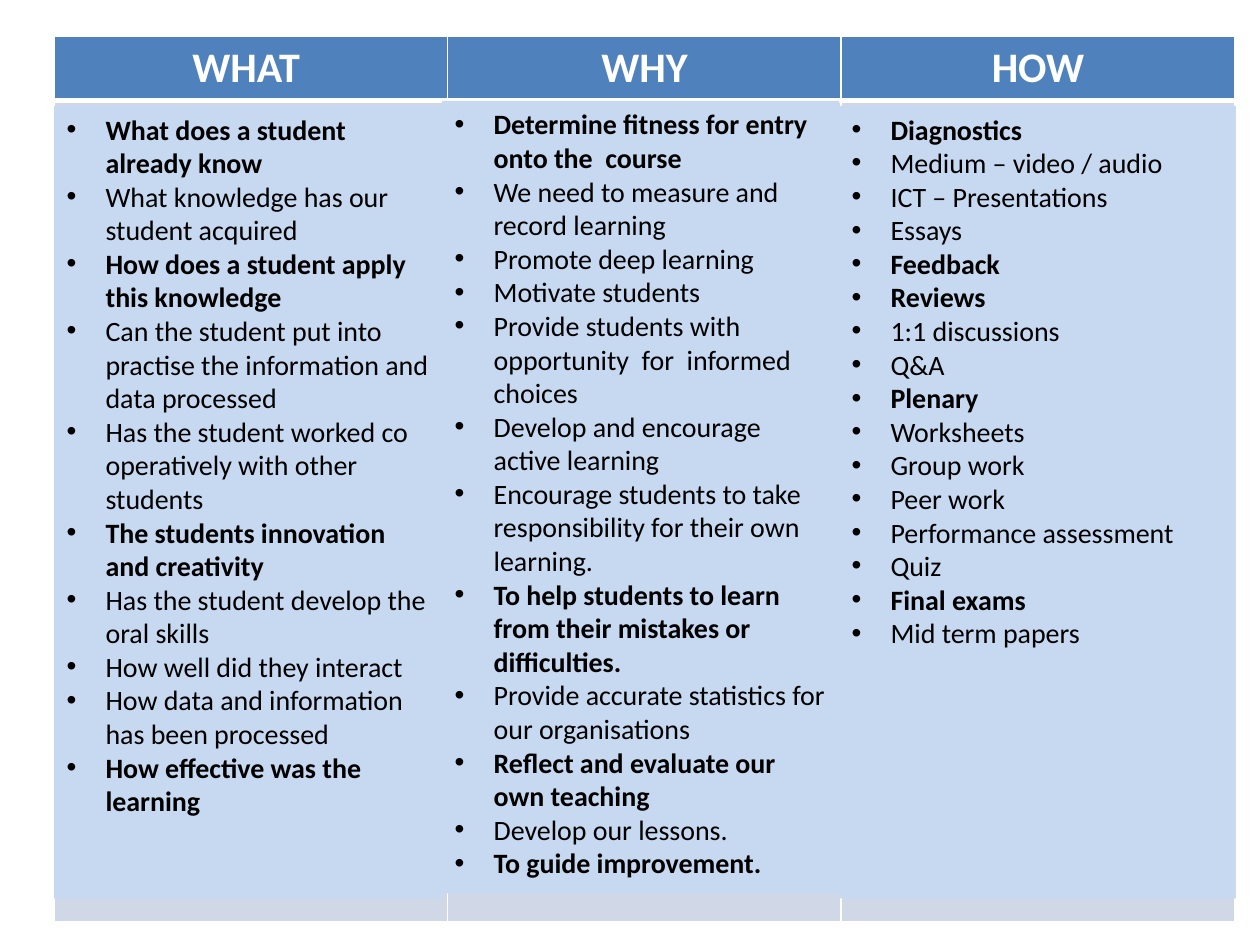
from pptx import Presentation
from pptx.dml.color import RGBColor
from pptx.enum.text import MSO_ANCHOR, PP_ALIGN
from pptx.oxml.ns import qn
from pptx.util import Inches, Pt
from lxml.etree import SubElement

CENTER, LEFT = PP_ALIGN.CENTER, PP_ALIGN.LEFT
TOP = MSO_ANCHOR.TOP
WHITE = RGBColor(0xFF, 0xFF, 0xFF)
BLACK = RGBColor(0, 0, 0)
BLUE = RGBColor(0x4F, 0x81, 0xBD)
PALE = RGBColor(0xD0, 0xD8, 0xE8)
SKY = RGBColor(0xC6, 0xD9, 0xF1)

HEADS = ["WHAT ", "WHY", "HOW"]
WHAT = [
    ("What does a student already know", True),
    ("What knowledge has our student acquired", False),
    ("How does a student apply this knowledge", True),
    ("Can the student put into practise the information and data processed", False),
    ("Has the student worked co operatively with other students", False),
    ("The students innovation and creativity", True),
    ("Has the student develop the oral skills", False),
    ("How well did they interact", False),
    ("How data and information has been processed", False),
    ("How effective was the learning", True),
]
WHY = [
    ("Determine fitness for entry onto the  course", True),
    ("We need to measure and record learning", False),
    ("Promote deep learning", False),
    ("Motivate students", False),
    ("Provide students with opportunity  for  informed choices", False),
    ("Develop and encourage active learning", False),
    ("Encourage students to take  responsibility for their own learning.", False),
    ("To help students to learn from their mistakes or difficulties.", True),
    ("Provide accurate statistics for our organisations", False),
    ("Reflect and evaluate our own teaching", True),
    ("Develop our lessons.", False),
    ("To guide improvement.", True),
]
HOW = [
    ("Diagnostics", True),
    ("Medium – video / audio", False),
    ("ICT – Presentations", False),
    ("Essays", False),
    ("Feedback", True),
    ("Reviews", True),
    ("1:1 discussions", False),
    ("Q&A", False),
    ("Plenary", True),
    ("Worksheets", False),
    ("Group work", False),
    ("Peer work", False),
    ("Performance assessment", False),
    ("Quiz", False),
    ("Final exams", True),
    ("Mid term papers", False),
]
PANELS = [(WHAT, 0.84, 3.08), (WHY, 0.8, 3.15), (HOW, 0.84, 3.15)]
X, Y, WIDE = 0.43, 0.29, 9.37
ROWS = [0.48, 6.52]
TALL = 6.29
INDENT = 0.31


def put_text(para, text, size=16, color=BLACK, bold=False, align=LEFT, bullet=False):
    para.alignment = align
    run = para.add_run()
    run.text = text
    font = run.font
    font.name, font.size, font.bold = "Calibri", Pt(size), bold
    font.color.rgb = color
    if bullet:
        props = para._p.get_or_add_pPr()
        props.set("marL", str(Inches(INDENT)))
        props.set("indent", str(-Inches(INDENT)))
        SubElement(props, qn("a:buFont"), typeface="Arial")
        SubElement(props, qn("a:buChar"), char="•")


def paint_cell(cell, fill, base):
    props = cell._tc.get_or_add_tcPr()
    for side, width in (("L", 1), ("R", 1), ("T", 1), ("B", base)):
        line = SubElement(props, qn(f"a:ln{side}"), w=str(Pt(width)))
        paint = SubElement(line, qn("a:solidFill"))
        SubElement(paint, qn("a:srgbClr"), val=str(WHITE))
    cell.fill.solid()
    cell.fill.fore_color.rgb = fill


def add_grid(slide):
    frame = slide.shapes.add_table(
        len(ROWS), len(HEADS), Inches(X), Inches(Y), Inches(WIDE), Inches(sum(ROWS)))
    table = frame.table
    for row, height in zip(table.rows, ROWS):
        row.height = Inches(height)
    for col, head in enumerate(HEADS):
        table.columns[col].width = Inches(WIDE / len(HEADS))
        top = table.cell(0, col)
        paint_cell(top, BLUE, 3)
        put_text(top.text_frame.paragraphs[0], head,
                 size=24, color=WHITE, bold=True, align=CENTER)
        paint_cell(table.cell(1, col), PALE, 1)


def add_panel(slide, items, left, top, width):
    box = slide.shapes.add_textbox(Inches(left), Inches(top), Inches(width), Inches(TALL))
    box.fill.solid()
    box.fill.fore_color.rgb = SKY
    frame = box.text_frame
    frame.word_wrap = True
    frame.vertical_anchor = TOP
    for i, (text, bold) in enumerate(items):
        para = frame.add_paragraph() if i else frame.paragraphs[0]
        put_text(para, text, bold=bold, bullet=True)


def main():
    deck = Presentation()
    deck.slide_width, deck.slide_height = Inches(10), Inches(7.5)
    slide = deck.slides.add_slide(deck.slide_layouts[6])
    add_grid(slide)
    left = X
    for items, top, width in PANELS:
        add_panel(slide, items, left, top, width)
        left += width
    deck.save("out.pptx")


if __name__ == "__main__":
    main()
